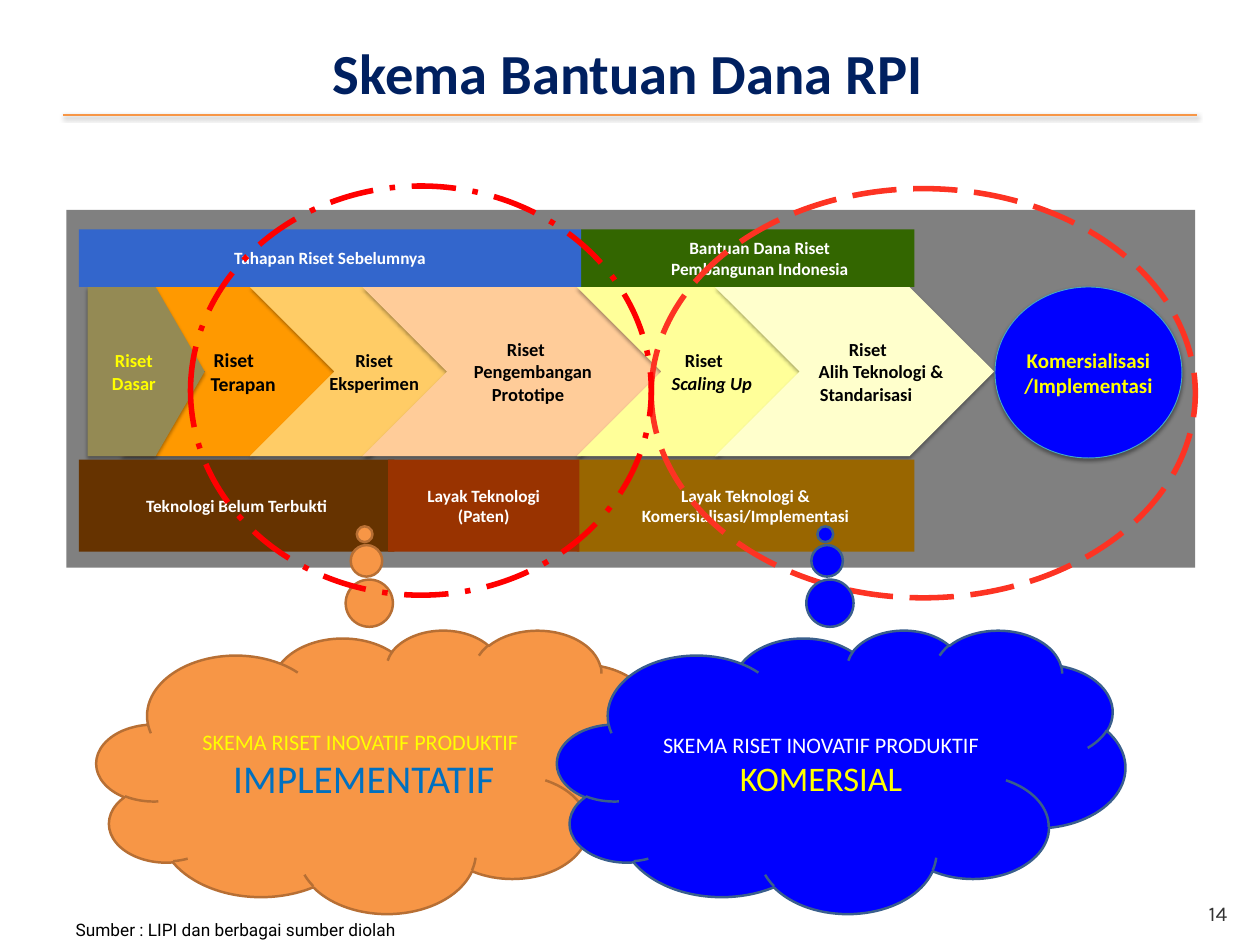
from dataclasses import dataclass

from lxml import etree
from pptx import Presentation
from pptx.dml.color import RGBColor
from pptx.enum.dml import MSO_LINE
from pptx.enum.shapes import MSO_CONNECTOR, MSO_SHAPE
from pptx.enum.text import MSO_ANCHOR, PP_ALIGN
from pptx.oxml.ns import qn
from pptx.util import Inches, Pt

RECT, OVAL = MSO_SHAPE.RECTANGLE, MSO_SHAPE.OVAL
CHEVRON, PLATE = MSO_SHAPE.CHEVRON, MSO_SHAPE.PENTAGON
CLOUD = MSO_SHAPE.CLOUD_CALLOUT
DASH, DASHDOT = MSO_LINE.LONG_DASH, MSO_LINE.LONG_DASH_DOT
CENTER, RIGHT = PP_ALIGN.CENTER, PP_ALIGN.RIGHT
MIDDLE, TOP = MSO_ANCHOR.MIDDLE, MSO_ANCHOR.TOP

# The slide is a grid of 100 columns by 100 rows
WIDE, HIGH = Inches(14.22), Inches(10.67)
COL, ROW = WIDE / 100, HIGH / 100

HEX = {
    "navy": "002060", "orange": "F79646", "rust": "B76F34", "gray": "808080",
    "ink": "333333", "black": "000000", "white": "FFFFFF", "yellow": "FFFF00",
    "blue": "0000FF", "steel": "3A5F8C", "aqua": "46AAC5", "sky": "0070C0",
    "olive": "948A54", "amber": "FF9900", "honey": "FFCC66", "peach": "FFCC99",
    "lemon": "FFFF99", "cream": "FFFFCC", "cocoa": "663300", "brick": "993300",
    "ochre": "996600", "green": "336600", "royal": "3366CC",
    "red": "FF0000", "coral": "FD3323",
}


@dataclass
class Line:
    text: str
    size: float
    color: str
    bold: bool = False
    dent: float = 0  # inches
    slant: bool = False
    font: str = "Calibri"


@dataclass
class Box:
    x: float
    y: float
    w: float
    h: float
    kind: MSO_SHAPE | None = None  # None makes a text box
    fill: str = ""
    edge: str = ""
    thick: float = 0
    dash: MSO_LINE | None = None
    adj: tuple[float, ...] = ()
    shade: tuple[float, float] | None = None  # opacity in percent, offset in points
    lines: tuple[Line, ...] = ()
    pad: tuple[float, float] = (0.14, 0.07)
    wrap: bool = True
    align: PP_ALIGN = CENTER
    anchor: MSO_ANCHOR = MIDDLE


def rgb(name: str) -> RGBColor:
    return RGBColor.from_string(HEX[name])


def cast(props, alpha: float, drop: float) -> None:
    """Replace the effects with a soft shadow straight below."""
    for old in props.findall(qn("a:effectLst")):
        props.remove(old)
    glow = etree.SubElement(props, qn("a:effectLst"))
    dark = etree.SubElement(
        glow, qn("a:outerShdw"), blurRad=str(Pt(3.1)), dist=str(Pt(drop)),
        dir="5400000", rotWithShape="0")
    tone = etree.SubElement(dark, qn("a:srgbClr"), val=HEX["black"])
    etree.SubElement(tone, qn("a:alpha"), val=str(int(alpha * 1000)))


def write(frame, box: Box) -> None:
    frame.word_wrap = box.wrap
    frame.vertical_anchor = box.anchor
    frame.margin_left = frame.margin_right = Inches(box.pad[0])
    frame.margin_top = frame.margin_bottom = Inches(box.pad[1])
    frame.text = "\n".join(line.text for line in box.lines)
    for para, line in zip(frame.paragraphs, box.lines):
        para.alignment = box.align
        if line.dent:
            props = para._p.get_or_add_pPr()
            props.set("marL", str(Inches(line.dent)))
            props.set("indent", "0")
        for run in para.runs:
            font = run.font
            font.name, font.size = line.font, Pt(line.size)
            font.bold, font.italic = line.bold, line.slant
            font.color.rgb = rgb(line.color)


def draw(slide, box: Box) -> None:
    area = [int(v) for v in (box.x * COL, box.y * ROW, box.w * COL, box.h * ROW)]
    if box.kind is None:
        write(slide.shapes.add_textbox(*area).text_frame, box)
        return
    shape = slide.shapes.add_shape(box.kind, *area)
    shape.shadow.inherit = False
    for i, value in enumerate(box.adj):
        shape.adjustments[i] = value
    if box.fill:
        shape.fill.solid()
        shape.fill.fore_color.rgb = rgb(box.fill)
    else:
        shape.fill.background()
    if box.edge:
        shape.line.color.rgb = rgb(box.edge)
        shape.line.width = Pt(box.thick)
        if box.dash:
            shape.line.dash_style = box.dash
    else:
        shape.line.fill.background()
    if box.shade:
        cast(shape._element.spPr, *box.shade)
    if box.lines:
        write(shape.text_frame, box)


def stage(x: float, w: float, fill: str, *rows: tuple[str, float], size: float = 15,
          ink: str = "black", kind: MSO_SHAPE = CHEVRON, adj: float = 0.5) -> Box:
    lines = tuple(Line(text, size, ink, True, dent, text == "Scaling Up")
                  for text, dent in rows)
    return Box(x, 30.37, w, 17.9, kind, fill, adj=(adj,), shade=(35, 1.8),
               lines=lines, pad=(0, 0.05), wrap=False)


def band(x: float, w: float, fill: str, *rows: str, top: bool = False,
         dent: float = 0) -> Box:
    y, h = (24.27, 6.09) if top else (48.64, 9.75)
    lines = tuple(Line(text, 14, "white", True, dent) for text in rows)
    return Box(x, y, w, h, RECT, fill, lines=lines, pad=(0.1, 0.05))


def cloud(x: float, fill: str, edge: str, *lines: Line) -> Box:
    return Box(x, 66.64, 45.08, 29.99, CLOUD, fill, edge, 2,
               adj=(-0.028, -0.837), lines=lines)


def ring(x: float, y: float, w: float, edge: str, dash: MSO_LINE) -> Box:
    return Box(x, y, w, 43.3, OVAL, edge=edge, thick=4.5, dash=dash)


SCHEME = "SKEMA RISET INOVATIF PRODUKTIF"
PARTS = [
    # Page number and title
    Box(75.04, 94.66, 23.35, 5.34, align=RIGHT, anchor=TOP,
        lines=(Line("14", 17, "ink", font="Karla"),)),
    Box(4.78, 1.97, 90.08, 11.25,
        lines=(Line("Skema Bantuan Dana RPI", 46, "navy", True),)),
    # Panel and research stages
    Box(5.27, 22.21, 89.59, 37.86, RECT, "gray"),
    stage(9.56, 17.09, "amber", ("Riset", 0.13), ("Terapan", 0.34), size=16),
    stage(6.96, 9.28, "olive", ("Riset", 0), ("Dasar", 0),
          ink="yellow", kind=PLATE, adj=0.419),
    stage(19.83, 16.24, "honey", ("Riset", 0.5), ("Eksperimen", 0.5)),
    stage(28.76, 24.05, "peach", ("Riset", 0.27), ("Pengembangan", 0.43),
          ("Prototipe", 0.32)),
    stage(45.78, 17.93, "lemon", ("Riset", 0.32), ("Scaling Up", 0.5)),
    stage(56.75, 22.15, "cream", ("Riset", 0.3), ("Alih Teknologi &", 0.6),
          ("Standarisasi", 0.26)),
    Box(78.97, 30.37, 14.84, 18.09, OVAL, "blue", "aqua", 0.75, shade=(38, 1.6),
        lines=(Line("Komersialisasi /Implementasi", 17, "yellow", True),),
        pad=(0, 0.05)),
    # Bands below and above the stages
    band(6.26, 25.04, "cocoa", "Teknologi Belum Terbukti"),
    band(45.78, 26.79, "ochre", "Layak Teknologi & Komersialisasi/Implementasi"),
    band(46.13, 26.44, "green", "Bantuan Dana Riset", "Pembangunan Indonesia",
         top=True, dent=0.27),
    band(6.26, 39.87, "royal", "Tahapan Riset Sebelumnya", top=True),
    band(30.8, 15.19, "brick", "Layak Teknologi", "(Paten)"),
    # Source line
    Box(4.78, 96.63, 27.85, 3.56, wrap=False, anchor=TOP,
        lines=(Line("Sumber : LIPI dan berbagai sumber diolah", 14, "black",
                    font="Roboto"),)),
    # Schemes and the rings they cover
    cloud(7.67, "orange", "rust", Line(SCHEME, 18, "yellow"),
          Line("IMPLEMENTATIF", 32, "sky", dent=0.08)),
    ring(51.69, 19.96, 43.18, "coral", DASH),
    cloud(44.23, "blue", "steel", Line(SCHEME, 18, "white"),
          Line("KOMERSIAL", 28, "yellow")),
    ring(15.12, 19.68, 36.57, "red", DASHDOT),
]


def main() -> None:
    deck = Presentation()
    deck.slide_width, deck.slide_height = WIDE, HIGH
    slide = deck.slides.add_slide(deck.slide_layouts[6])
    # Rule under the title
    y = int(12.18 * ROW)
    rule = slide.shapes.add_connector(
        MSO_CONNECTOR.STRAIGHT, int(5 * COL), y, int(95 * COL), y)
    rule.line.color.rgb = rgb("orange")
    rule.line.width = Pt(2)
    cast(rule._element.spPr, 38, 1.6)
    for part in PARTS:
        draw(slide, part)
    deck.save("out.pptx")


if __name__ == "__main__":
    main()
